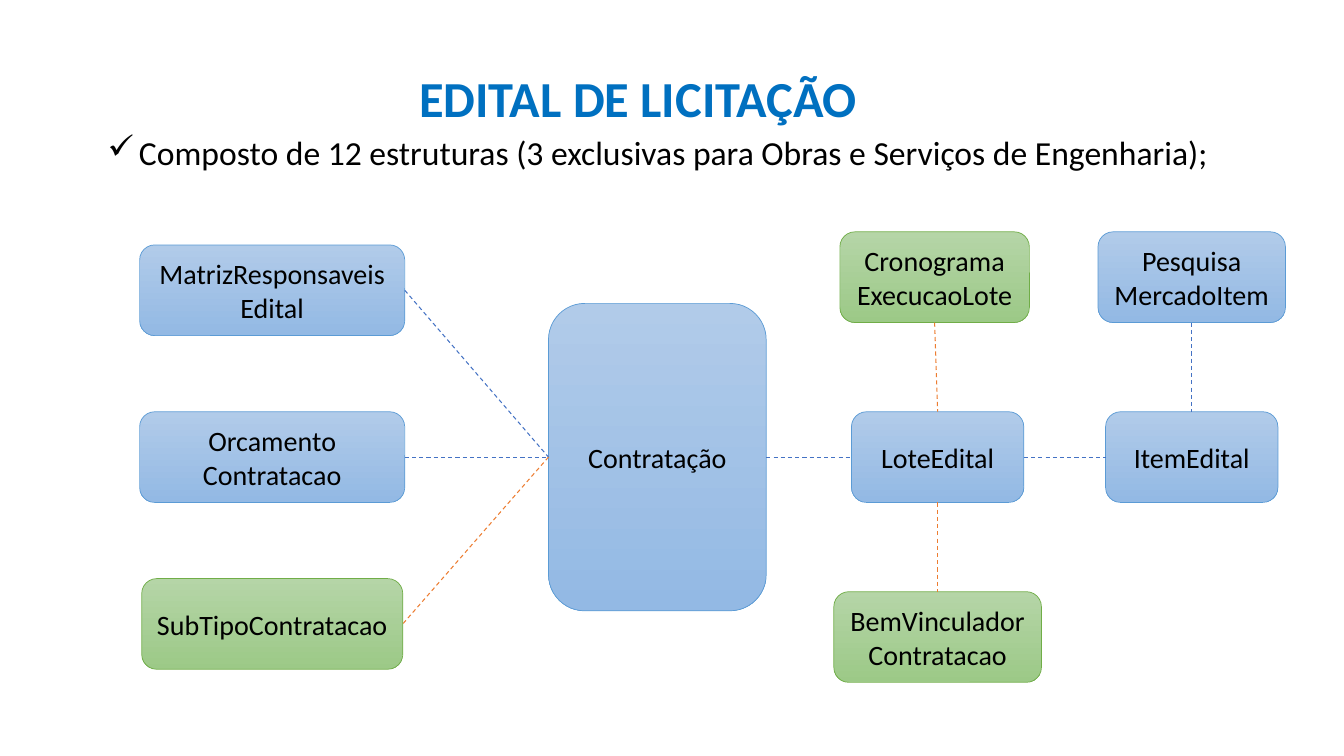
import pptx
import pptx.util
import pptx.dml.color
import pptx.enum.dml
import pptx.enum.shapes
import pptx.enum.text
import pptx.oxml
import pptx.oxml.ns

Inches = pptx.util.Inches
RGBColor = pptx.dml.color.RGBColor
PP_ALIGN = pptx.enum.text.PP_ALIGN

BLACK = RGBColor(0x00, 0x00, 0x00)
TITLE_BLUE = RGBColor(0x00, 0x70, 0xC0)
LINK_BLUE = RGBColor(0x44, 0x72, 0xC4)
LINK_ORANGE = RGBColor(0xED, 0x7D, 0x31)
# Node palettes: gradient top, gradient bottom, outline
BLUE = (RGBColor(0xB1, 0xCB, 0xE9), RGBColor(0x93, 0xB9, 0xE4), RGBColor(0x5B, 0x9B, 0xD5))
GREEN = (RGBColor(0xB5, 0xD5, 0xA7), RGBColor(0x9C, 0xC9, 0x87), RGBColor(0x70, 0xAD, 0x47))

FONT = "Calibri"
TOP, LEFT, BOTTOM, RIGHT = range(4)
NODE_H = 0.9
LEFT_STEP = 1.655  # row distance in the left column

# Text, centre x from the diagram's left edge, width, palette
LEFT_NODES = [
    ("MatrizResponsaveisEdital", 1.31, 2.63, BLUE),
    ("Orcamento\nContratacao", 1.31, 2.63, BLUE),
    ("SubTipoContratacao", 1.31, 2.59, GREEN),
]
LOT_NODES = [
    ("Cronograma\nExecucaoLote", 7.88, 1.88, GREEN),
    ("LoteEdital", 7.91, 1.71, BLUE),
    ("BemVinculadorContratacao", 7.91, 2.06, GREEN),
]
ITEM_NODES = [
    ("Pesquisa\nMercadoItem", 10.43, 1.86, BLUE),
    ("ItemEdital", 10.43, 1.71, BLUE),
]


def write(tf, text, size, color=BLACK, bold=False, align=PP_ALIGN.CENTER,
          spacing=None, bullet=None):
    tf.word_wrap = True
    for i, line in enumerate(text.split("\n")):
        p = tf.add_paragraph() if i else tf.paragraphs[0]
        p.alignment = align
        if spacing:
            p.line_spacing = spacing
        if bullet:
            pPr = p._p.get_or_add_pPr()
            pPr.set("marL", str(Inches(0.31)))
            pPr.set("indent", str(-Inches(0.31)))
            pPr.append(pptx.oxml.parse_xml(
                f'<a:buChar {pptx.oxml.ns.nsdecls("a")} char="{bullet}"/>'))
        r = p.add_run()
        r.text = line
        r.font.name = FONT
        r.font.size = pptx.util.Pt(size)
        r.font.bold = bold
        r.font.color.rgb = color


def add_text(s, box, text, size, **fmt):
    sp = s.shapes.add_textbox(*map(Inches, box))
    write(sp.text_frame, text, size, **fmt)


def add_node(s, text, cx, cy, width, palette, height=NODE_H):
    sp = s.shapes.add_shape(
        pptx.enum.shapes.MSO_SHAPE.ROUNDED_RECTANGLE,
        Inches(cx - width / 2), Inches(cy - height / 2), Inches(width), Inches(height))
    sp.shadow.inherit = False
    first, last, outline = palette
    sp.fill.gradient()
    sp.fill.gradient_angle = 270
    for stop, color, position in zip(sp.fill.gradient_stops, (first, last), (0, 1)):
        stop.color.rgb = color
        stop.position = position
    sp.line.color.rgb = outline
    sp.line.width = pptx.util.Pt(0.5)
    sp.text_frame.vertical_anchor = pptx.enum.text.MSO_ANCHOR.MIDDLE
    write(sp.text_frame, text, 20)
    return sp


def link(s, start, start_side, end, end_side, color):
    c = s.shapes.add_connector(pptx.enum.shapes.MSO_CONNECTOR.STRAIGHT, 0, 0, 0, 0)
    c.begin_connect(start, start_side)
    c.end_connect(end, end_side)
    c.line.color.rgb = color
    c.line.width = pptx.util.Pt(0.75)
    c.line.dash_style = pptx.enum.dml.MSO_LINE.DASH
    c._element.spPr.append(pptx.oxml.parse_xml(
        f'<a:effectLst {pptx.oxml.ns.nsdecls("a")}/>'))


def add_column(s, nodes, left, middle, step):
    return [add_node(s, text, left + cx, middle + (row - 1) * step, width, palette)
            for row, (text, cx, width, palette) in enumerate(nodes)]


def add_heading(s, left, top, width):
    add_text(s, (left + 1.12, top, 8.48, 1.14), "EDITAL DE LICITAÇÃO", 36,
             color=TITLE_BLUE, bold=True, spacing=2.0)
    add_text(s, (left, top + 1.24, width, 0.5),
             "Composto de 12 estruturas (3 exclusivas para Obras e Serviços de Engenharia);",
             24, align=PP_ALIGN.LEFT, bullet="✓")


def add_diagram(s, left, top, height):
    middle = top + height / 2
    right_step = (height - NODE_H) / 2

    # Nodes
    contract = add_node(s, "Contratação", left + 5.13, middle, 2.16, BLUE, height=3.05)
    matrix, budget, subtype = add_column(s, LEFT_NODES, left, middle, LEFT_STEP)
    schedule, lot, asset = add_column(s, LOT_NODES, left, middle, right_step)
    research, item = add_column(s, ITEM_NODES, left, middle, right_step)

    # Links
    for start, start_side, end, end_side, color in [
        (matrix, RIGHT, contract, LEFT, LINK_BLUE),
        (budget, RIGHT, contract, LEFT, LINK_BLUE),
        (contract, LEFT, subtype, RIGHT, LINK_ORANGE),
        (contract, RIGHT, lot, LEFT, LINK_BLUE),
        (lot, RIGHT, item, LEFT, LINK_BLUE),
        (schedule, BOTTOM, lot, TOP, LINK_ORANGE),
        (lot, BOTTOM, asset, TOP, LINK_ORANGE),
        (research, BOTTOM, item, TOP, LINK_BLUE),
    ]:
        link(s, start, start_side, end, end_side, color)


def main():
    prs = pptx.Presentation()
    prs.slide_width, prs.slide_height = Inches(13.33), Inches(7.5)
    s = prs.slides.add_slide(prs.slide_layouts[6])
    add_heading(s, 0.97, 0.02, 11.35)
    add_diagram(s, 1.39, 2.3, 4.47)
    prs.save("out.pptx")


if __name__ == "__main__":
    main()
